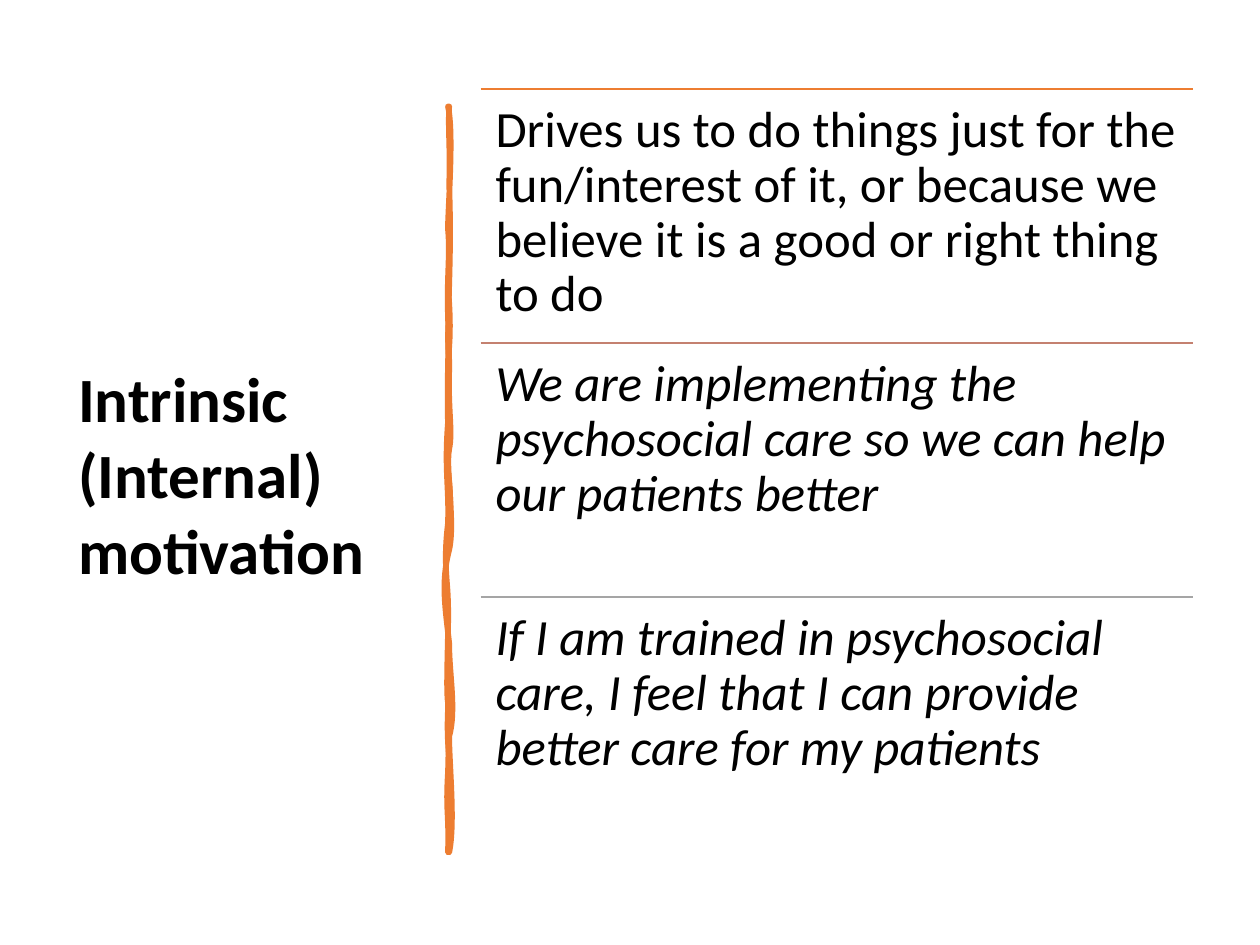
from lxml import etree
from pptx import Presentation, util as u
from pptx.dml.color import RGBColor
from pptx.enum import shapes, text
from pptx.oxml.ns import qn

HUES = {"ink": "000000", "orange": "ED7D31", "rose": "C48170", "gray": "A5A5A5"}
INCH = 2.54

ROWS = [
    ("Drives us to do things just for the fun/interest of it, or because "
     "we believe it is a good or right thing to do", "orange", False),
    ("We are implementing the psychosocial care so we can help our "
     "patients better", "rose", True),
    ("If I am trained in psychosocial care, I feel that I can provide "
     "better care for my patients", "gray", True),
]

EDGE = [
    (3.56, .84), (3.55, 1.03), (3.57, 1.16), (3.56, 1.46), (3.57, 1.74),
    (3.57, 1.91), (3.56, 2.26), (3.55, 2.58), (3.56, 2.62), (3.56, 2.94),
    (3.55, 3.25), (3.59, 3.42), (3.56, 3.56), (3.53, 3.72), (3.61, 4.14),
    (3.56, 4.36), (3.49, 4.62), (3.53, 4.83), (3.56, 5.1), (3.56, 5.35),
    (3.62, 5.63), (3.56, 5.84), (3.56, 6.06), (3.61, 6.53), (3.56, 6.76),
    (3.56, 6.75), (3.55, 6.76), (3.55, 6.76), (3.56, 6.45), (3.53, 6.44),
    (3.55, 6.13), (3.56, 5.83), (3.55, 5.7), (3.55, 5.57), (3.53, 5.46),
    (3.56, 4.94), (3.55, 4.77), (3.55, 4.62), (3.51, 4.47), (3.55, 4.15),
    (3.56, 3.86), (3.52, 3.73), (3.55, 3.35), (3.54, 3), (3.56, 2.79),
    (3.55, 2.5), (3.54, 2.16), (3.57, 2.03), (3.55, 1.81), (3.55, 1.65),
    (3.6, 1.04), (3.55, .84), (3.55, .84), (3.55, .84), (3.56, .84),
]
CORE = [
    (3.56, .84), (3.59, 1.13), (3.56, 1.27), (3.56, 1.52), (3.56, 1.81),
    (3.55, 1.97), (3.56, 2.08), (3.55, 2.16), (3.63, 2.54), (3.56, 2.94),
    (3.58, 3.33), (3.56, 3.43), (3.56, 3.62), (3.58, 3.78), (3.62, 3.99),
    (3.56, 4.3), (3.54, 4.63), (3.57, 4.76), (3.56, 5.16), (3.56, 5.58),
    (3.56, 5.53), (3.56, 5.78), (3.52, 6.02), (3.56, 6.46), (3.56, 6.76),
    (3.56, 6.76), (3.55, 6.75), (3.55, 6.76), (3.51, 6.45), (3.59, 6.32),
    (3.55, 6.13), (3.52, 5.9), (3.51, 5.68), (3.55, 5.39), (3.54, 5.08),
    (3.57, 5.02), (3.55, 4.71), (3.52, 4.41), (3.57, 4.17), (3.55, 3.86),
    (3.54, 3.48), (3.6, 3.25), (3.55, 3), (3.52, 2.74), (3.52, 2.59),
    (3.55, 2.38), (3.56, 2.15), (3.52, 1.86), (3.55, 1.64), (3.53, 1.41),
    (3.58, 1.21), (3.55, .84), (3.55, .84), (3.55, .84), (3.56, .84),
]


def tint(name):
    return RGBColor.from_string(HUES[name])


def turn(knots, mid=(3.56, 3.8)):
    return [(u.Cm(INCH * (mid[0] + y - mid[1])), u.Cm(INCH * (mid[1] - x + mid[0])))
            for x, y in knots]


def trace(shape, knots, **flags):
    size = {"w": str(shape.width), "h": str(shape.height)}
    outline = etree.Element(qn("a:path"), {**size, **flags})

    def add(kind, points):
        part = etree.SubElement(outline, qn(kind))
        for x, y in points:
            etree.SubElement(part, qn("a:pt"), x=str(x - shape.left), y=str(y - shape.top))

    points = turn(knots)
    add("a:moveTo", points[:1])
    for k in range(1, len(points), 3):
        add("a:cubicBezTo", points[k:k + 3])
    etree.SubElement(outline, qn("a:close"))
    return outline


def write(frame, words, size, bold=False, italic=False, gap=1.0, after=0,
          anchor=text.MSO_ANCHOR.TOP, inset=None):
    frame.word_wrap = True
    frame.auto_size = text.MSO_AUTO_SIZE.NONE
    frame.vertical_anchor = anchor
    if inset is not None:
        frame.margin_left = frame.margin_right = u.Cm(inset)
        frame.margin_top = frame.margin_bottom = u.Cm(inset)
    para = frame.paragraphs[0]
    para.alignment = text.PP_ALIGN.LEFT
    para.line_spacing = gap
    para.space_after = u.Pt(after)
    run = para.add_run()
    run.text = words
    font = run.font
    font.name, font.size = "Calibri", u.Pt(size)
    font.bold, font.italic = bold, italic
    font.color.rgb = tint("ink")


class Page:
    def __init__(self, deck):
        self.slide = deck.slides.add_slide(deck.slide_layouts[5])
        self.items = self.slide.shapes

    def title(self, words, x, y, w, h):
        head = self.items.title
        head.left, head.top, head.width, head.height = map(u.Cm, (x, y, w, h))
        write(head.text_frame, words, 36, bold=True, anchor=text.MSO_ANCHOR.MIDDLE)

    def rule(self, group, x, y, w, hue):
        line = group.shapes.add_connector(shapes.MSO_CONNECTOR.STRAIGHT,
                                          *map(u.Cm, (x, y, x + w, y)))
        line.line.color.rgb = tint(hue)
        line.line.width = u.Pt(1)
        etree.SubElement(line._element.spPr, qn("a:effectLst"))

    def note(self, group, words, x, y, w, h, italic):
        box = group.shapes.add_textbox(*map(u.Cm, (x, y, w, h)))
        write(box.text_frame, words, 29, italic=italic, gap=0.9, after=10, inset=0.3)

    def stroke(self, edge, core, hue, width):
        ends = turn(edge[::3])
        pen = self.items.build_freeform(*ends[0])
        pen.add_line_segments(ends[1:])
        shape = pen.convert_to_shape()
        paths = shape._element.spPr.find(".//" + qn("a:pathLst"))
        paths[:] = [trace(shape, edge, fill="none"), trace(shape, core, stroke="0")]
        shape.rotation = 90
        shape.shadow.inherit = False
        shape.fill.solid()
        shape.fill.fore_color.rgb = tint(hue)
        shape.line.color.rgb = tint(hue)
        shape.line.width = u.Pt(width)
        etree.SubElement(shape.line._get_or_add_ln(), qn("a:round"))


def main():
    deck = Presentation()
    deck.slide_width, deck.slide_height = u.Cm(25.4), u.Cm(19.05)
    page = Page(deck)
    page.title("Intrinsic (Internal) motivation", 1.32, 1.78, 7.11, 15.52)
    page.stroke(EDGE, CORE, "orange", 3.25)
    group = page.items.add_group_shape()
    left, top, wide, high = 9.69, 1.79, 14.36, 5.12
    for n, (words, hue, italic) in enumerate(ROWS):
        y = top + n * high
        page.rule(group, left, y, wide, hue)
        page.note(group, words, left, y, wide, high, italic)
    deck.save("out.pptx")


if __name__ == "__main__":
    main()
